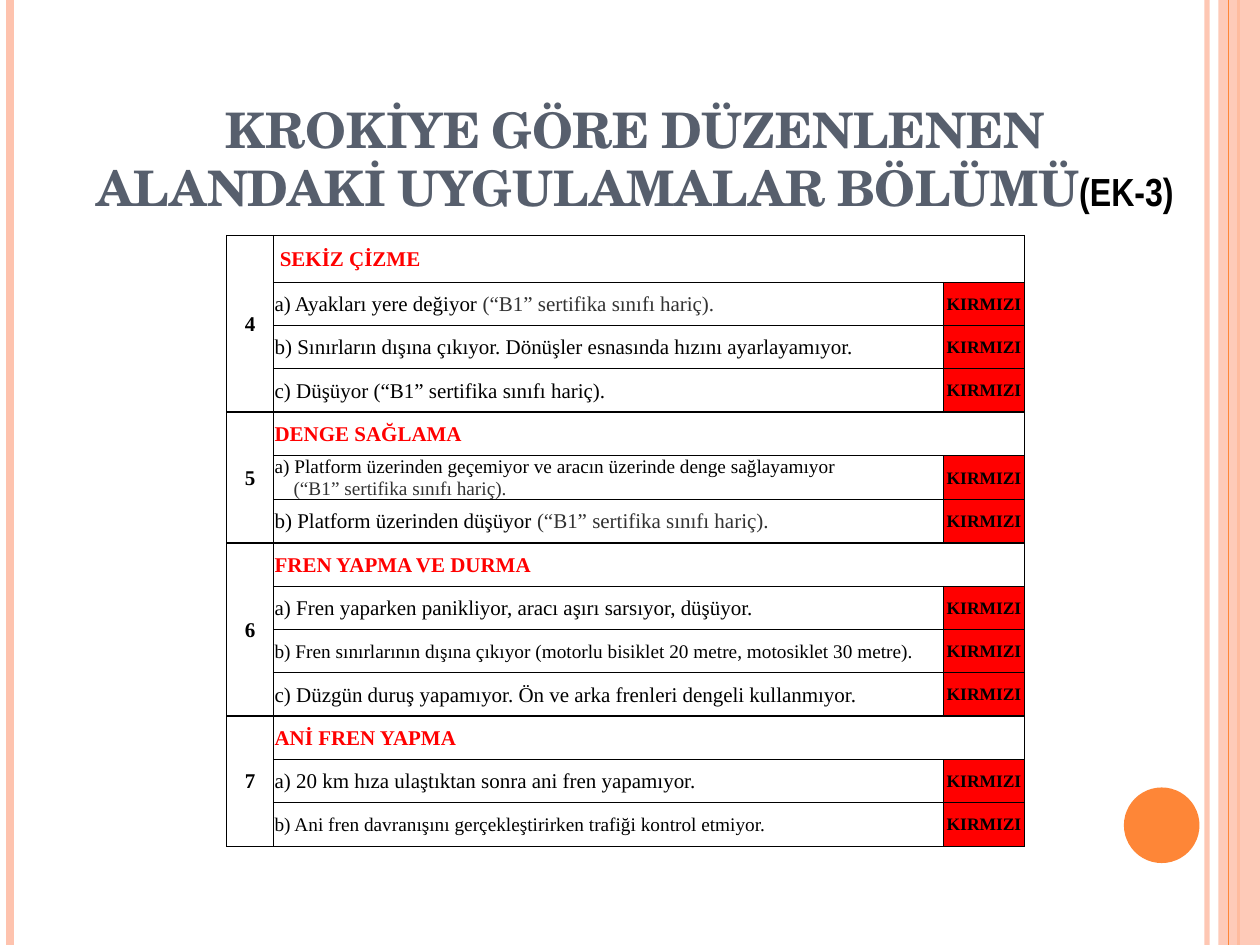
from typing import NamedTuple, Optional

from lxml import etree
from pptx import Presentation
from pptx.dml.color import RGBColor
from pptx.enum.shapes import MSO_CONNECTOR, MSO_SHAPE
from pptx.enum.text import MSO_ANCHOR, MSO_AUTO_SIZE, PP_ALIGN
from pptx.oxml.ns import qn
from pptx.util import Inches, Pt

LEFT, CENTER = PP_ALIGN.LEFT, PP_ALIGN.CENTER
MIDDLE, BOTTOM = MSO_ANCHOR.MIDDLE, MSO_ANCHOR.BOTTOM
STRAIGHT = MSO_CONNECTOR.STRAIGHT
RECTANGLE, OVAL = MSO_SHAPE.RECTANGLE, MSO_SHAPE.OVAL
NO_AUTOFIT = MSO_AUTO_SIZE.NONE

PEACH, ORANGE, SLATE = "FEC3AE", "FE8637", "575F6D"
RED, BLACK, GRAY, WHITE = "FF0000", "000000", "333333", "FFFFFF"
TABLE_FONT = "Times New Roman"
THIN, THICK = 0.5, 1
SLIDE_HEIGHT = 7.5


class Stripe(NamedTuple):
    x: float
    color: str
    width: float
    opacity: int = 100


class Fault(NamedTuple):
    text: str
    exemption: str = ""
    size: int = 12
    breaks: bool = False


class Section(NamedTuple):
    number: str
    heading: str
    faults: list[Fault]


STRIPES = [
    Stripe(9.58, PEACH, 3, 93),
    Stripe(0.08, PEACH, 4.5),
    Stripe(9.83, ORANGE, 1.5),
    Stripe(9.75, ORANGE, 0.75),
]
EXEMPT = "(“B1” sertifika sınıfı hariç)."
SECTIONS = [
    Section("4", " SEKİZ ÇİZME", [
        Fault("a) Ayakları yere değiyor ", EXEMPT),
        Fault("b) Sınırların dışına çıkıyor. Dönüşler esnasında hızını ayarlayamıyor."),
        Fault("c) Düşüyor " + EXEMPT),
    ]),
    Section("5", "DENGE SAĞLAMA", [
        Fault("a) Platform üzerinden geçemiyor ve aracın üzerinde denge sağlayamıyor",
              EXEMPT, 11, breaks=True),
        Fault("b) Platform üzerinden düşüyor ", EXEMPT),
    ]),
    Section("6", "FREN YAPMA VE DURMA", [
        Fault("a) Fren yaparken panikliyor, aracı aşırı sarsıyor, düşüyor."),
        Fault("b) Fren sınırlarının dışına çıkıyor (motorlu bisiklet 20 metre, "
              "motosiklet 30 metre).", size=11),
        Fault("c) Düzgün duruş yapamıyor. Ön ve arka frenleri dengeli kullanmıyor."),
    ]),
    Section("7", "ANİ FREN YAPMA", [
        Fault("a) 20 km hıza ulaştıktan sonra ani fren yapamıyor."),
        Fault("b) Ani fren davranışını gerçekleştirirken trafiği kontrol etmiyor.", size=11),
    ]),
]


def rgb(color: str) -> RGBColor:
    return RGBColor.from_string(color)


def add_text(paragraph, text: str, *, size: float = 12, color: str = BLACK,
             font: str = TABLE_FONT, bold: bool = False,
             small_caps: bool = False, align: Optional[PP_ALIGN] = None) -> None:
    run = paragraph.add_run()
    run.text = text
    run.font.size = Pt(size)
    run.font.name = font
    run.font.bold = bold
    run.font.color.rgb = rgb(color)
    if small_caps:
        run.font._element.set("cap", "small")
    if align is not None:
        paragraph.alignment = align


def set_opacity(element, percent: int) -> None:
    color = element.find(".//" + qn("a:srgbClr"))
    etree.SubElement(color, qn("a:alpha"), val=str(percent * 1000))


def draw_stripe(slide, stripe: Stripe) -> None:
    x = Inches(stripe.x)
    line = slide.shapes.add_connector(STRAIGHT, x, 0, x, Inches(SLIDE_HEIGHT))
    line.line.color.rgb = rgb(stripe.color)
    line.line.width = Pt(stripe.width)
    properties = line._element.spPr
    if stripe.opacity < 100:
        set_opacity(properties, stripe.opacity)
    etree.SubElement(properties, qn("a:effectLst"))


def draw_shape(slide, kind: MSO_SHAPE, left: float, top: float, width: float,
               height: float, color: str, opacity: int = 100) -> None:
    shape = slide.shapes.add_shape(kind, *map(Inches, (left, top, width, height)))
    shape.shadow.inherit = False
    shape.fill.solid()
    shape.fill.fore_color.rgb = rgb(color)
    shape.line.fill.background()
    if opacity < 100:
        set_opacity(shape._element.spPr, opacity)


def format_cell(cell, fill: str, left: float, right: float, top: float, bottom: float) -> None:
    cell.vertical_anchor = MIDDLE
    cell.margin_left = cell.margin_right = cell.margin_top = Inches(0.01)
    cell.margin_bottom = 0
    properties = cell._tc.get_or_add_tcPr()
    for side, width in zip("LRTB", (left, right, top, bottom)):
        border = etree.SubElement(properties, qn(f"a:ln{side}"), w=str(Pt(width)))
        solid = etree.SubElement(border, qn("a:solidFill"))
        etree.SubElement(solid, qn("a:srgbClr"), val=BLACK)
    cell.fill.solid()
    cell.fill.fore_color.rgb = rgb(fill)


def write_fault(cell, fault: Fault) -> None:
    paragraph = cell.text_frame.paragraphs[0]
    add_text(paragraph, fault.text, size=fault.size, align=LEFT)
    if fault.breaks:
        # The continuation line hangs under the text after "a)"
        indent = Inches(0.15)
        properties = paragraph._p.get_or_add_pPr()
        properties.set("marL", str(indent))
        properties.set("indent", str(-indent))
        paragraph.add_line_break()
    if fault.exemption:
        add_text(paragraph, fault.exemption, size=fault.size, color=GRAY)


def draw_section(table, first: int, section: Section) -> int:
    """Fill the rows of one section and return the row after it."""
    last = first + len(section.faults)
    for row in range(first, last + 1):
        top = THICK if row == first else THIN
        bottom = THICK if row == last < len(table.rows) - 1 else THIN
        is_fault = row > first
        format_cell(table.cell(row, 0), WHITE, THIN, THIN, top, bottom)
        format_cell(table.cell(row, 1), WHITE, THIN, THIN, top, bottom)
        format_cell(table.cell(row, 2), RED if is_fault else WHITE, THIN, THIN, top, bottom)
        if is_fault:
            write_fault(table.cell(row, 1), section.faults[row - first - 1])
            add_text(table.cell(row, 2).text_frame.paragraphs[0], "KIRMIZI",
                     size=10, bold=True, align=CENTER)
    number, heading = table.cell(first, 0), table.cell(first, 1)
    number.merge(table.cell(last, 0))
    heading.merge(table.cell(first, 2))
    add_text(number.text_frame.paragraphs[0], section.number, bold=True, align=CENTER)
    add_text(heading.text_frame.paragraphs[0], section.heading, bold=True, color=RED, align=LEFT)
    return last + 1


def main() -> None:
    deck = Presentation()
    deck.slide_width, deck.slide_height = Inches(10), Inches(SLIDE_HEIGHT)
    slide = deck.slides.add_slide(deck.slide_layouts[5])

    # Side stripes and corner dot
    for stripe in STRIPES[:3]:
        draw_stripe(slide, stripe)
    draw_shape(slide, RECTANGLE, 9.67, 0, 0.33, SLIDE_HEIGHT, PEACH, 87)
    draw_stripe(slide, STRIPES[3])
    draw_shape(slide, OVAL, 8.92, 6.25, 0.6, 0.6, ORANGE)

    # Title
    title = slide.shapes.title
    title.left, title.top, title.width, title.height = map(Inches, (0.51, 0.52, 9.06, 1.25))
    title.text_frame.auto_size = NO_AUTOFIT
    title.text_frame.vertical_anchor = BOTTOM
    words = title.text_frame.paragraphs[0]
    add_text(words, "KROKİYE GÖRE DÜZENLENEN ALANDAKİ UYGULAMALAR BÖLÜMÜ", size=28,
             font="TeX Gyre Schola", color=SLATE, bold=True, small_caps=True, align=CENTER)
    add_text(words, "(ek-3)", size=28, font="Arial Narrow", bold=True, small_caps=True)

    # Table of faults
    row_count = sum(1 + len(section.faults) for section in SECTIONS)
    widths, first_height, height = (0.37, 5.32, 0.64), 0.37, 4.84
    table = slide.shapes.add_table(row_count, len(widths), Inches(1.8), Inches(1.87),
                                   Inches(sum(widths)), Inches(height)).table
    table.first_row = table.horz_banding = False
    for column, width in zip(table.columns, widths):
        column.width = Inches(width)
    for row in table.rows:
        row.height = Inches((height - first_height) / (row_count - 1))
    table.rows[0].height = Inches(first_height)
    next_row = 0
    for section in SECTIONS:
        next_row = draw_section(table, next_row, section)

    deck.save("out.pptx")


if __name__ == "__main__":
    main()
